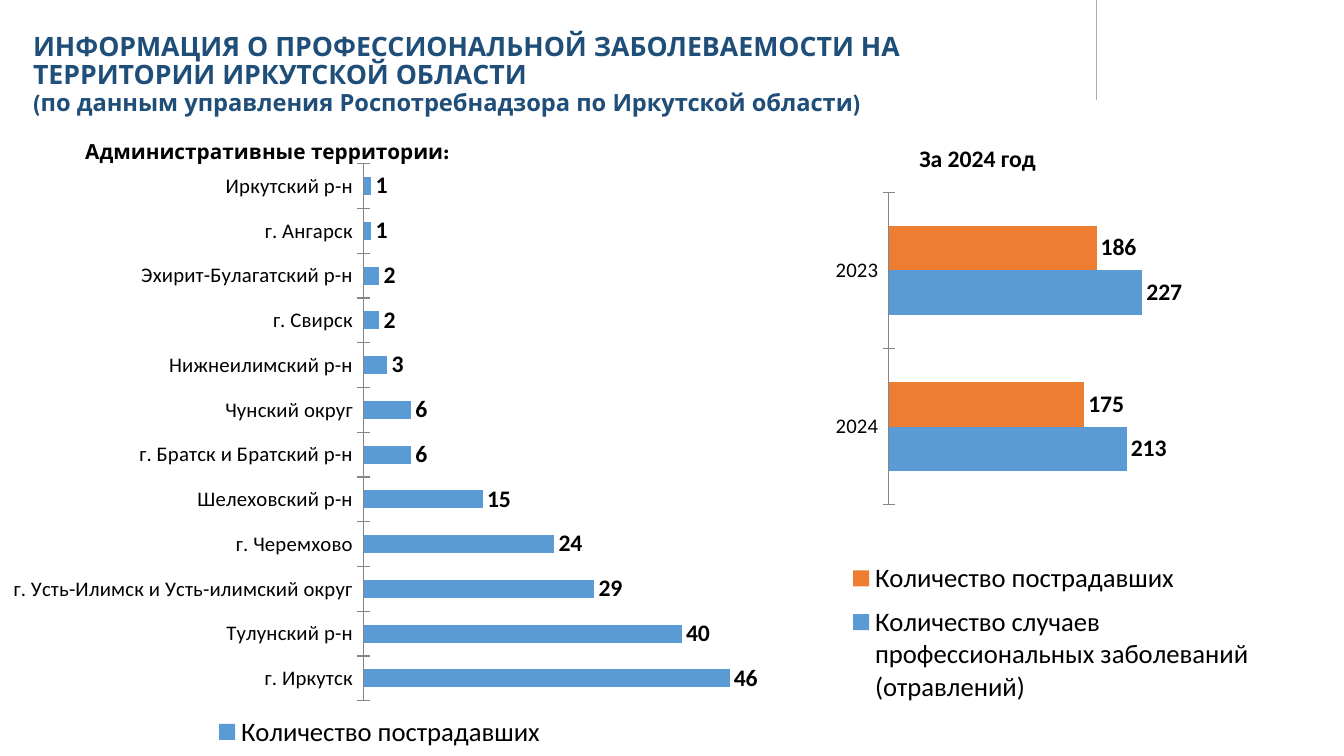
from lxml.etree import SubElement
from pptx import Presentation
from pptx.chart.data import CategoryChartData
from pptx.dml.color import RGBColor
from pptx.enum.chart import XL_CHART_TYPE, XL_LABEL_POSITION, XL_LEGEND_POSITION, XL_TICK_MARK
from pptx.enum.shapes import MSO_CONNECTOR
from pptx.enum.text import MSO_ANCHOR, MSO_AUTO_SIZE, PP_ALIGN
from pptx.oxml.ns import qn
from pptx.util import Inches, Pt

COLORS = {"title": "1F4E79", "text": "000000", "rule": "AFABAB", "axis": "868686",
          "blue": "5B9BD5", "orange": "ED7D31"}
HEADING_FONT, BODY_FONT = "League Spartan", "Calibri"

TERRITORIES = {
    "г. Иркутск": 46, "Тулунский р-н": 40, "г. Усть-Илимск и Усть-илимский округ": 29,
    "г. Черемхово": 24, "Шелеховский р-н": 15, "г. Братск и Братский р-н": 6,
    "Чунский округ": 6, "Нижнеилимский р-н": 3, "г. Свирск": 2,
    "Эхирит-Булагатский р-н": 2, "г. Ангарск": 1, "Иркутский р-н": 1,
}
VICTIMS = "Количество пострадавших"
CASES = "Количество случаев профессиональных заболеваний (отравлений)"


def color(name):
    return RGBColor.from_string(COLORS[name])


def style_font(font, size, color_name="text", name=BODY_FONT, bold=False):
    font.size = Pt(size)
    font.bold = bold
    font.name = name
    font.color.rgb = color(color_name)


def add_title(slide, left, top, width, height):
    title = slide.shapes.title
    title.left, title.top, title.width, title.height = map(Inches, (left, top, width, height))
    text_frame = title.text_frame
    text_frame.text = ("ИНФОРМАЦИЯ О ПРОФЕССИОНАЛЬНОЙ ЗАБОЛЕВАЕМОСТИ НА ТЕРРИТОРИИ ИРКУТСКОЙ ОБЛАСТИ\n"
                       "(по данным управления Роспотребнадзора по Иркутской области)")
    text_frame.word_wrap = True
    text_frame.auto_size = MSO_AUTO_SIZE.NONE
    text_frame.vertical_anchor = MSO_ANCHOR.TOP
    for paragraph, size in zip(text_frame.paragraphs, (18, 16)):
        paragraph.alignment = PP_ALIGN.LEFT
        paragraph.line_spacing = 0.9
        paragraph.space_before = Pt(0)
        style_font(paragraph.runs[0].font, size, "title", HEADING_FONT, True)


def add_rule(slide, x, top, bottom):
    rule = slide.shapes.add_connector(MSO_CONNECTOR.STRAIGHT, Inches(x), Inches(top),
                                      Inches(x), Inches(bottom))
    rule.line.color.rgb = color("rule")
    rule.line.width = Pt(0.75)
    SubElement(rule.element.spPr, qn("a:effectLst"))


def add_heading(slide, text, left, top, width, height, size, font_name):
    box = slide.shapes.add_textbox(*map(Inches, (left, top, width, height)))
    box.text_frame.word_wrap = True
    box.text_frame.text = text
    style_font(box.text_frame.paragraphs[0].runs[0].font, size, name=font_name, bold=True)


def set_layout(element, x, y, width, height, inner=False):
    """Place a plot area or legend by fractions of its chart."""
    for old_layout in element.findall(qn("c:layout")):
        element.remove(old_layout)
    layout = SubElement(element, qn("c:layout"))
    # A legend's layout follows its position; a plot area's comes first
    element.insert(0 if inner else 1, layout)
    manual = SubElement(layout, qn("c:manualLayout"))
    settings = [("layoutTarget", "inner")] if inner else []
    settings += [("xMode", "edge"), ("yMode", "edge"),
                 ("x", x), ("y", y), ("w", width), ("h", height)]
    for tag, value in settings:
        SubElement(manual, qn(f"c:{tag}")).set("val", str(value))


def add_bar_chart(slide, box, categories, series_list, maximum, plot_layout,
                  legend_position, legend_layout):
    """Draw horizontal bars; series_list holds (name, values, color name)."""
    data = CategoryChartData()
    data.categories = categories
    for name, values, _ in series_list:
        data.add_series(name, values)
    chart = slide.shapes.add_chart(XL_CHART_TYPE.BAR_CLUSTERED, *map(Inches, box), data).chart
    chart.has_title = False
    style_font(chart.font, 18)

    # Axes
    chart.value_axis.visible = False
    chart.value_axis.has_major_gridlines = False
    chart.value_axis.minimum_scale, chart.value_axis.maximum_scale = 0, maximum
    axis = chart.category_axis
    axis.major_tick_mark = XL_TICK_MARK.CROSS
    axis.format.line.color.rgb = color("axis")
    axis.format.line.width = Pt(0.75)
    style_font(axis.tick_labels.font, 14)

    # Bars and their values
    plot = chart.plots[0]
    plot.vary_by_categories = False
    plot.gap_width, plot.overlap = 150, 0
    for series, (_, _, color_name) in zip(plot.series, series_list):
        series.format.fill.solid()
        series.format.fill.fore_color.rgb = color(color_name)
        labels = series.data_labels
        labels.show_value = True
        labels.position = XL_LABEL_POSITION.OUTSIDE_END
        style_font(labels.font, 16, bold=True)

    # Legend and plot placement
    chart.has_legend = True
    chart.legend.position = legend_position
    chart.legend.include_in_layout = False
    style_font(chart.legend.font, 18)
    chart_element = chart.element.find(qn("c:chart"))
    set_layout(chart_element.find(qn("c:plotArea")), *plot_layout, inner=True)
    set_layout(chart_element.find(qn("c:legend")), *legend_layout)


def add_territories(slide, left, top, width, height):
    add_heading(slide, "Административные территории:", left + 0.7, top, 3.88, 0.34,
                14, HEADING_FONT)
    add_bar_chart(slide, (left, top + 0.23, width, height - 0.23), list(TERRITORIES),
                  [(VICTIMS, list(TERRITORIES.values()), "blue")], 50,
                  (0.474, 0.01, 0.519, 0.898), XL_LEGEND_POSITION.RIGHT,
                  (0.26, 0.92, 0.47, 0.08))


def add_years(slide, left, top, width, height):
    add_heading(slide, "За 2024 год", left + 0.92, top, 2.52, 0.37, 16, BODY_FONT)
    add_bar_chart(slide, (left, top + 0.4, width, height - 0.4), ["2024", "2023"],
                  [(CASES, (213, 227), "blue"), (VICTIMS, (175, 186), "orange")], 250,
                  (0.171, 0.02, 0.61, 0.575), XL_LEGEND_POSITION.BOTTOM,
                  (0.07, 0.68, 0.91, 0.3))


def main():
    presentation = Presentation()
    presentation.slide_width, presentation.slide_height = Inches(12.6), Inches(7.09)
    slide = presentation.slides.add_slide(presentation.slide_layouts[5])
    add_rule(slide, 10.28, 0, 0.94)
    add_title(slide, 0.21, 0.26, 10.04, 0.8)
    add_territories(slide, 0, 1.25, 7.19, 5.84)
    add_years(slide, 7.6, 1.3, 4.29, 5.5)
    presentation.save("out.pptx")


if __name__ == "__main__":
    main()
